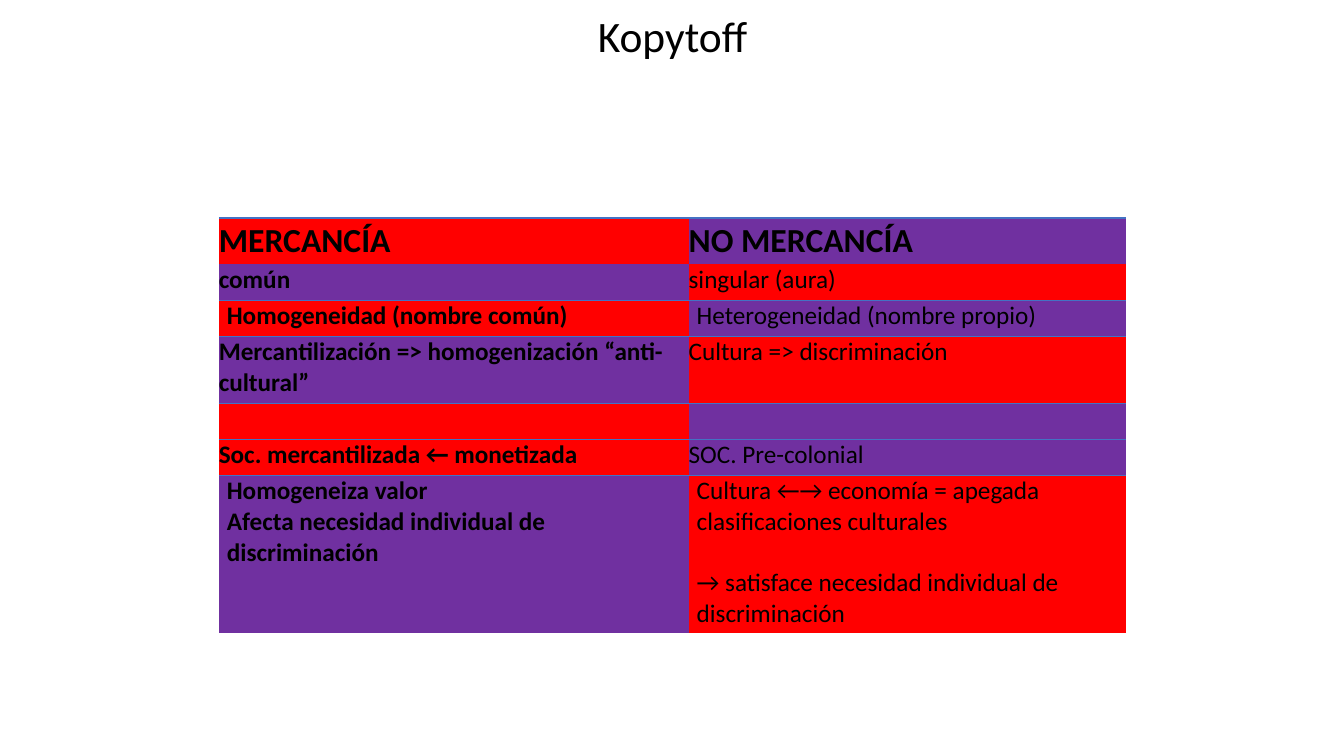
"""Build the Kopytoff slide: a title above a two-column comparison table."""
from dataclasses import dataclass

from lxml.etree import SubElement
from pptx import Presentation
from pptx.dml.color import RGBColor
from pptx.enum.text import MSO_ANCHOR, PP_ALIGN
from pptx.oxml.ns import qn
from pptx.util import Inches, Pt


@dataclass(frozen=True)
class Theme:
    font: str = "Calibri"
    text: str = "000000"
    red: str = "FF0000"
    purple: str = "7030A0"
    rule: str = "4472C4"
    title_size: int = 31
    header_size: int = 24
    body_size: int = 18


THEME = Theme()
NO_GRID_STYLE = "{2D5ABB26-0587-4C30-8999-92F81FD0307C}"
LEFT, WIDTH = 2.17, 9
COLUMN_WIDTHS = [4.66, 4.34]

# height, colour band, left inset, top rule width, texts
ROWS = [
    (0.46, 0, 0, 1.5, ["MERCANCÍA", "NO MERCANCÍA"]),
    (0.36, 1, 0, 0, ["común", "singular (aura)"]),
    (0.36, 2, 0.08, 0.75, ["Homogeneidad (nombre común)", "Heterogeneidad (nombre propio)"]),
    (0.66, 3, 0, 0, ["Mercantilización => homogenización “anti-cultural”", "Cultura => discriminación"]),
    (0.36, 4, 0, 0.75, ["", ""]),
    (0.36, 4, 0, 0, ["Soc. mercantilizada ← monetizada", "SOC. Pre-colonial"]),
    (1.56, 5, 0.08, 0.75, [
        "Homogeneiza valor\nAfecta necesidad individual de discriminación",
        "Cultura ←→ economía = apegada clasificaciones culturales\n"
        "→ satisface necesidad individual de discriminación",
    ]),
]


def style_text(paragraph, size, bold=False):
    paragraph.font.name = THEME.font
    paragraph.font.size = Pt(size)
    paragraph.font.bold = bold
    paragraph.font.color.rgb = RGBColor.from_string(THEME.text)


def add_top_rule(cell, width):
    line = SubElement(cell._tc.get_or_add_tcPr(), qn("a:lnT"), w=str(Pt(width)))
    fill = SubElement(line, qn("a:solidFill"))
    SubElement(fill, qn("a:srgbClr"), val=THEME.rule)


presentation = Presentation()
presentation.slide_width = Inches(13.33)
presentation.slide_height = Inches(7.5)
slide = presentation.slides.add_slide(presentation.slide_layouts[6])

title = slide.shapes.add_textbox(Inches(LEFT), Inches(0.08), Inches(WIDTH), Inches(0.6))
title.text_frame.word_wrap = True
title.text_frame.vertical_anchor = MSO_ANCHOR.MIDDLE
title_paragraph = title.text_frame.paragraphs[0]
title_paragraph.text = "Kopytoff"
title_paragraph.alignment = PP_ALIGN.CENTER
title_paragraph.line_spacing = 0.9
style_text(title_paragraph, THEME.title_size)

table_height = sum(row[0] for row in ROWS)
table = slide.shapes.add_table(
    len(ROWS), len(COLUMN_WIDTHS), Inches(LEFT), Inches(2.16), Inches(WIDTH), Inches(table_height)
).table
table.first_row = False
table.horz_banding = False
table._tbl.tblPr.find(qn("a:tableStyleId")).text = NO_GRID_STYLE
for column, width in zip(table.columns, COLUMN_WIDTHS):
    column.width = Inches(width)

for row_index, (height, band, inset, rule_width, texts) in enumerate(ROWS):
    table.rows[row_index].height = Inches(height)
    is_header = row_index == 0
    for column_index, text in enumerate(texts):
        cell = table.cell(row_index, column_index)
        cell.text = text
        cell.margin_left = Inches(inset)
        cell.margin_right = Inches(0.02 if is_header else 0.11)
        cell.margin_top = cell.margin_bottom = 0
        cell.vertical_anchor = MSO_ANCHOR.MIDDLE if is_header else MSO_ANCHOR.TOP
        if rule_width:
            add_top_rule(cell, rule_width)
        cell.fill.solid()
        colour = THEME.purple if (band + column_index) % 2 else THEME.red
        cell.fill.fore_color.rgb = RGBColor.from_string(colour)
        for paragraph in cell.text_frame.paragraphs:
            size = THEME.header_size if is_header else THEME.body_size
            style_text(paragraph, size, bold=is_header or column_index == 0)

table.cell(len(ROWS) - 1, 1).text_frame.paragraphs[1].space_before = Pt(22)

presentation.save("out.pptx")
